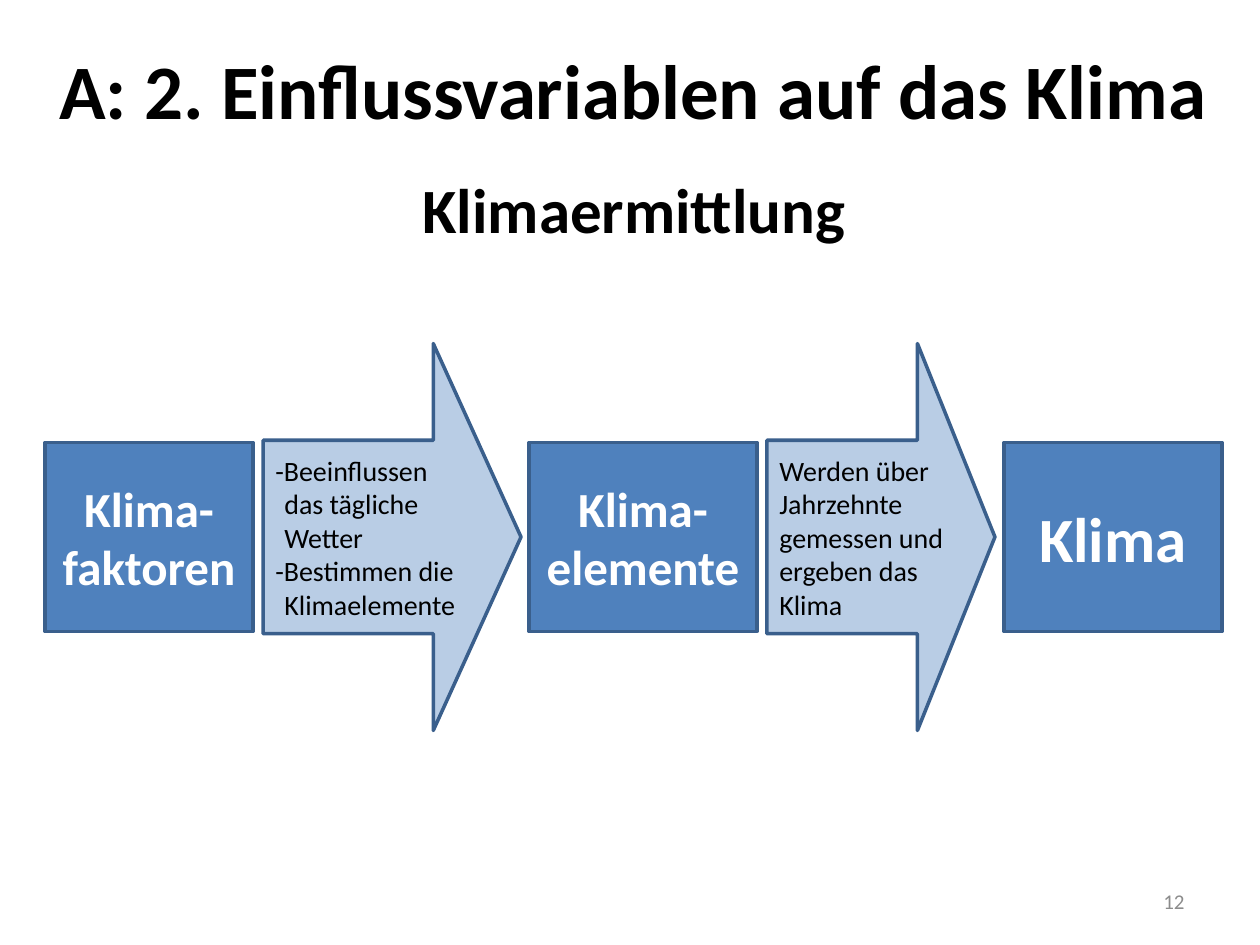
from pptx import Presentation
from pptx.dml.color import RGBColor
from pptx.enum.shapes import MSO_SHAPE as Shape
from pptx.enum.text import MSO_ANCHOR as Anchor, PP_ALIGN as Align
from pptx.util import Emu, Pt

PX = 914400 / 126
COLORS = {
    "black": "000000",
    "white": "FFFFFF",
    "grey": "8C8C8C",
    "box": "4F81BD",
    "arrow": "B9CDE5",
    "outline": "3A5F8C",
}
BOX_HEIGHT, ARROW_HEIGHT = 189, 387
HANGING = 9


def px(value):
    return Emu(round(value * PX))


def color(name):
    return RGBColor.from_string(COLORS[name])


def write(shape, text, size, ink="black", bold=False, align=Align.CENTER,
          anchor=Anchor.MIDDLE, hanging=0):
    """Put each line in its own paragraph; lines without a dash get the hanging indent."""
    frame = shape.text_frame
    frame.word_wrap = True
    frame.vertical_anchor = anchor
    for index, line in enumerate(text.split("\n")):
        para = frame.add_paragraph() if index else frame.paragraphs[0]
        para.alignment = align
        if hanging and not line.startswith("-"):
            para._p.get_or_add_pPr().set("marL", str(px(hanging)))
        span = para.add_run()
        span.text = line
        span.font.name = "Calibri"
        span.font.size = Pt(size)
        span.font.bold = bold
        span.font.color.rgb = color(ink)


def add_text(page, box, text, size, **style):
    write(page.shapes.add_textbox(*map(px, box)), text, size, **style)


def add_outlined(page, kind, box, fill):
    shape = page.shapes.add_shape(kind, *map(px, box))
    shape.shadow.inherit = False
    shape.fill.solid()
    shape.fill.fore_color.rgb = color(fill)
    shape.line.color.rgb = color("outline")
    shape.line.width = Pt(2)
    return shape


def add_stage(page, left, middle, width, text, size):
    box = (left, middle - BOX_HEIGHT / 2, width, BOX_HEIGHT)
    shape = add_outlined(page, Shape.RECTANGLE, box, "box")
    write(shape, text, size, ink="white", bold=True)


def add_step(page, left, middle, width, text, hanging=0):
    box = (left, middle - ARROW_HEIGHT / 2, width, ARROW_HEIGHT)
    arrow = add_outlined(page, Shape.RIGHT_ARROW, box, "arrow")
    arrow.adjustments[0] = 0.5
    arrow.adjustments[1] = 0.34
    write(arrow, text, 16, align=Align.LEFT, hanging=hanging)


def add_headings(page, left, top, width):
    add_text(page, (left, top, width, 157), "A: 2. Einflussvariablen auf das Klima",
             44, bold=True)
    add_text(page, (left, top + 154, width, 89), "Klimaermittlung",
             36, bold=True, anchor=Anchor.TOP)


def add_process(page, left, middle):
    add_stage(page, left, middle, 208, "Klima-\nfaktoren", 28)
    add_step(page, left + 218, middle, 258,
             "-Beeinflussen\ndas tägliche\nWetter\n-Bestimmen die\nKlimaelemente",
             hanging=HANGING)
    add_stage(page, left + 484, middle, 228, "Klima-elemente", 28)
    add_step(page, left + 722, middle, 228,
             "Werden über Jahrzehnte gemessen und ergeben das Klima")
    add_stage(page, left + 959, middle, 218, "Klima", 36)


def main():
    deck = Presentation()
    deck.slide_width, deck.slide_height = px(1260), px(945)
    page = deck.slides.add_slide(deck.slide_layouts[6])
    add_headings(page, 35, 10, 1198)
    add_process(page, 45, 537)
    add_text(page, (903, 876, 294, 50), "12", 12, ink="grey", align=Align.RIGHT)
    deck.save("out.pptx")


if __name__ == "__main__":
    main()
